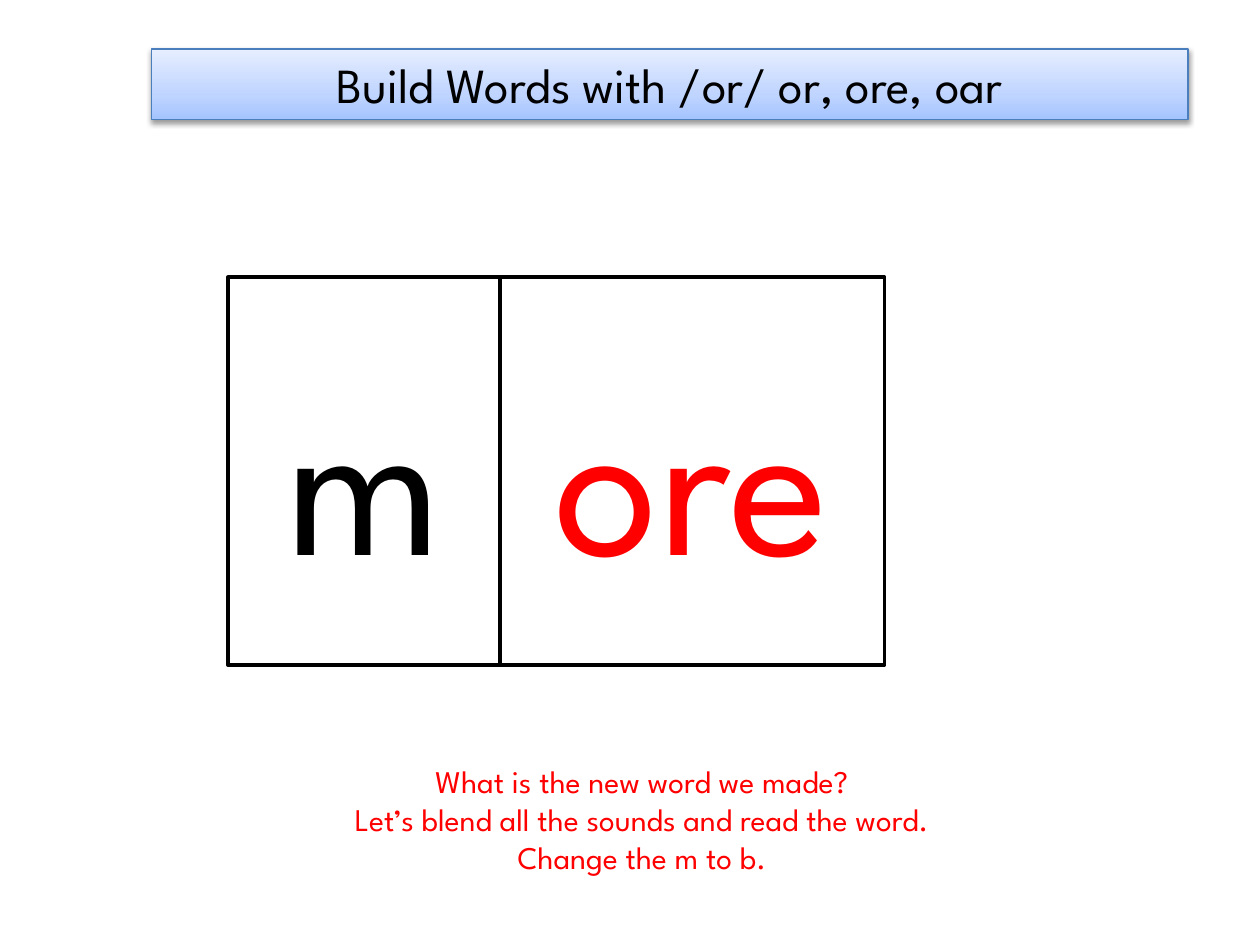
import copy
from dataclasses import dataclass

import lxml.etree
import pptx
import pptx.dml.color
import pptx.enum.shapes
import pptx.enum.text
import pptx.oxml.ns
import pptx.util

WIDTH, HEIGHT = 10, 7.5
FONT = "League Spartan"
BLACK, RED, WHITE = "000000", "FF0000", "FFFFFF"
BANNER_STOPS = [(0, "A4C4FF"), (0.35, "BFD4FF"), (1, "E6EEFF")]
TILE_LEFT, TILE_TOP, TILE_HEIGHT = 1.81, 2.2, 3.08


@dataclass
class SoundTile:
    letters: str
    width: float
    color: str


TILES = [SoundTile("m", 2.16, BLACK), SoundTile("ore", 3.05, RED)]
PROMPTS = [
    "What is the new word we made?",
    "Let’s blend all the sounds and read the word.",
    "Change the m to b.",
]


def rgb(value: str) -> pptx.dml.color.RGBColor:
    return pptx.dml.color.RGBColor.from_string(value)


def write(shape, lines: list[str], size: float, color: str) -> None:
    """Fill a shape with centred lines in one style."""
    frame = shape.text_frame
    frame.word_wrap = True
    frame.text = "\n".join(lines)
    for para in frame.paragraphs:
        para.alignment = pptx.enum.text.PP_ALIGN.CENTER
        for span in para.runs:
            span.font.name = FONT
            span.font.size = pptx.util.Pt(size)
            span.font.color.rgb = rgb(color)


def add_box(page, bounds: tuple, line: str, line_width: float):
    """Add a rectangle with a plain outline and no shadow."""
    box = page.shapes.add_shape(
        pptx.enum.shapes.MSO_SHAPE.RECTANGLE, *map(pptx.util.Inches, bounds)
    )
    box.shadow.inherit = False
    box.line.color.rgb = rgb(line)
    box.line.width = pptx.util.Pt(line_width)
    box.text_frame.vertical_anchor = pptx.enum.text.MSO_ANCHOR.MIDDLE
    return box


def shade(box, stops: list[tuple[float, str]]) -> None:
    """Apply a gradient that runs from the bottom to the top."""
    box.fill.gradient()
    box.fill.gradient_angle = 90
    stop_list = box.element.spPr.find(".//" + pptx.oxml.ns.qn("a:gsLst"))
    while len(stop_list) < len(stops):
        stop_list.append(copy.deepcopy(stop_list[-1]))
    for stop, (position, color) in zip(box.fill.gradient_stops, stops):
        stop.position = position
        stop.color.rgb = rgb(color)


def add_shadow(box, blur: float, distance: float, opacity: int) -> None:
    """Cast a soft black shadow straight down."""
    qn = pptx.oxml.ns.qn
    effects = box.element.spPr.find(qn("a:effectLst"))
    shadow = lxml.etree.SubElement(
        effects,
        qn("a:outerShdw"),
        blurRad=str(pptx.util.Pt(blur)),
        dist=str(pptx.util.Pt(distance)),
        dir=str(90 * 60000),
        rotWithShape="0",
    )
    color = lxml.etree.SubElement(shadow, qn("a:srgbClr"), val=BLACK)
    lxml.etree.SubElement(color, qn("a:alpha"), val=str(opacity * 1000))


def main() -> None:
    deck = pptx.Presentation()
    deck.slide_width = pptx.util.Inches(WIDTH)
    deck.slide_height = pptx.util.Inches(HEIGHT)
    page = deck.slides.add_slide(deck.slide_layouts[6])

    # Title banner
    banner = add_box(page, (1.2, 0.39, 8.23, 0.56), "4B7EBC", 0.75)
    shade(banner, BANNER_STOPS)
    add_shadow(banner, blur=3.1, distance=1.6, opacity=38)
    write(banner, ["Build Words with /or/ or, ore, oar"], 28, BLACK)

    # Sound tiles, side by side
    left = TILE_LEFT
    for tile in TILES:
        box = add_box(page, (left, TILE_TOP, tile.width, TILE_HEIGHT), BLACK, 2)
        box.fill.solid()
        box.fill.fore_color.rgb = rgb(WHITE)
        write(box, [tile.letters], 120, tile.color)
        left += tile.width

    # Prompts for the class
    prompt_box = page.shapes.add_textbox(
        *map(pptx.util.Inches, (1.61, 0.8 * HEIGHT, 6.97, 1.01))
    )
    write(prompt_box, PROMPTS, 18, RED)
    prompt_box.text_frame.auto_size = pptx.enum.text.MSO_AUTO_SIZE.SHAPE_TO_FIT_TEXT

    deck.save("out.pptx")


if __name__ == "__main__":
    main()
